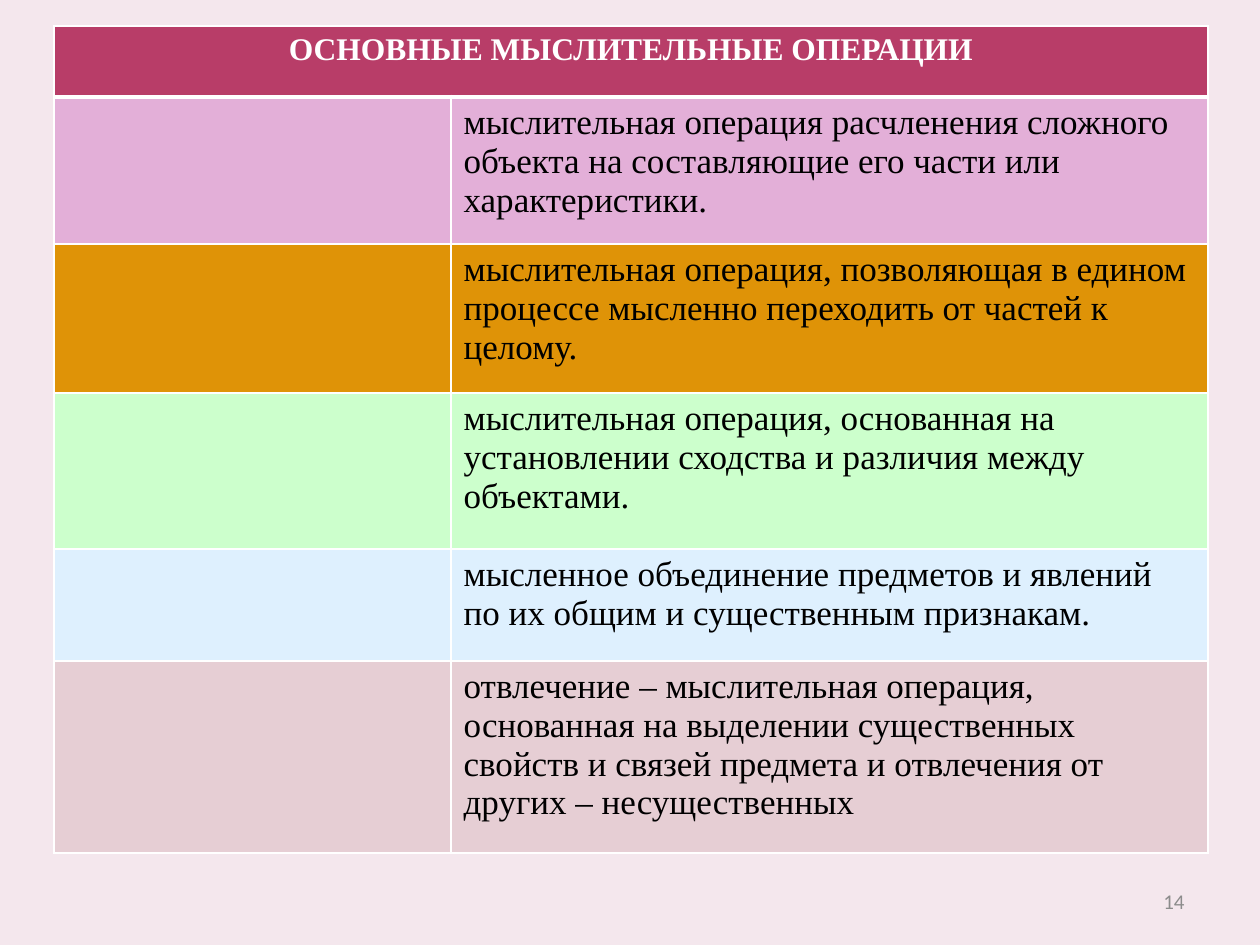
import lxml.etree
import pptx
import pptx.dml.color
import pptx.enum.text
import pptx.oxml.ns
import pptx.util
from dataclasses import dataclass


@dataclass(frozen=True)
class Theme:
    background: str = "F4E7ED"
    header: str = "B83D68"
    white: str = "FFFFFF"
    body: str = "000000"
    muted: str = "8C8C8C"
    serif: str = "Times New Roman"
    sans: str = "Calibri"
    header_size: int = 18
    body_size: int = 20
    number_size: int = 12
    border: int = 1
    header_rule: int = 3


theme = Theme()
rgb = pptx.dml.color.RGBColor.from_string
qn = pptx.oxml.ns.qn
align = pptx.enum.text.PP_ALIGN


def px(length):
    return pptx.util.Emu(round(length * 914400 / 126))


def write(frame, text, font, size, color, bold=False, alignment=align.LEFT):
    paragraph = frame.paragraphs[0]
    paragraph.alignment = alignment
    run = paragraph.add_run()
    run.text = text
    run.font.name = font
    run.font.size = pptx.util.Pt(size)
    run.font.bold = bold
    run.font.color.rgb = rgb(color)


operations = [
    ("E3AFD8", 147, "мыслительная операция расчленения сложного объекта на составляющие его части или характеристики."),
    ("DF9307", 149, "мыслительная операция, позволяющая в едином процессе мысленно переходить от частей к целому."),
    ("CCFFCC", 156, "мыслительная операция, основанная на установлении сходства и различия между объектами."),
    ("DEF0FE", 112, "мысленное объединение предметов и явлений по их общим и существенным признакам."),
    ("E6CED4", 192, "отвлечение – мыслительная операция, основанная на выделении существенных свойств и связей предмета и отвлечения от других – несущественных"),
]
row_heights = [71] + [height for _, height, _ in operations]
row_colors = [theme.header] + [color for color, _, _ in operations]
column_widths = [397, 757]

presentation = pptx.Presentation()
presentation.slide_width = px(1260)
presentation.slide_height = px(945)
slide = presentation.slides.add_slide(presentation.slide_layouts[6])
slide.background.fill.solid()
slide.background.fill.fore_color.rgb = rgb(theme.background)

definitions = slide.shapes.add_table(
    len(row_heights), len(column_widths), px(54), px(26), px(sum(column_widths)), px(sum(row_heights))
).table
for column, width in zip(definitions.columns, column_widths):
    column.width = px(width)

for row_index, (row, height, color) in enumerate(zip(definitions.rows, row_heights, row_colors)):
    row.height = px(height)
    for cell in row.cells:
        properties = cell._tc.get_or_add_tcPr()
        for side in ("L", "R", "T", "B"):
            at_rule = (row_index, side) in ((0, "B"), (1, "T"))
            weight = theme.header_rule if at_rule else theme.border
            edge = lxml.etree.SubElement(properties, qn(f"a:ln{side}"), w=str(pptx.util.Pt(weight)))
            paint = lxml.etree.SubElement(edge, qn("a:solidFill"))
            lxml.etree.SubElement(paint, qn("a:srgbClr"), val=theme.white)
        cell.fill.solid()
        cell.fill.fore_color.rgb = rgb(color)

heading = definitions.cell(0, 0)
heading.merge(definitions.cell(0, 1))
write(heading.text_frame, "ОСНОВНЫЕ МЫСЛИТЕЛЬНЫЕ ОПЕРАЦИИ", theme.serif, theme.header_size,
      theme.white, bold=True, alignment=align.CENTER)
for row_index, (_, _, definition) in enumerate(operations, start=1):
    write(definitions.cell(row_index, 1).text_frame, definition, theme.serif, theme.body_size, theme.body)

page_number = slide.shapes.add_textbox(px(903), px(876), px(294), px(50)).text_frame
page_number.word_wrap = True
page_number.vertical_anchor = pptx.enum.text.MSO_ANCHOR.MIDDLE
write(page_number, "14", theme.sans, theme.number_size, theme.muted, alignment=align.RIGHT)

presentation.save("out.pptx")
